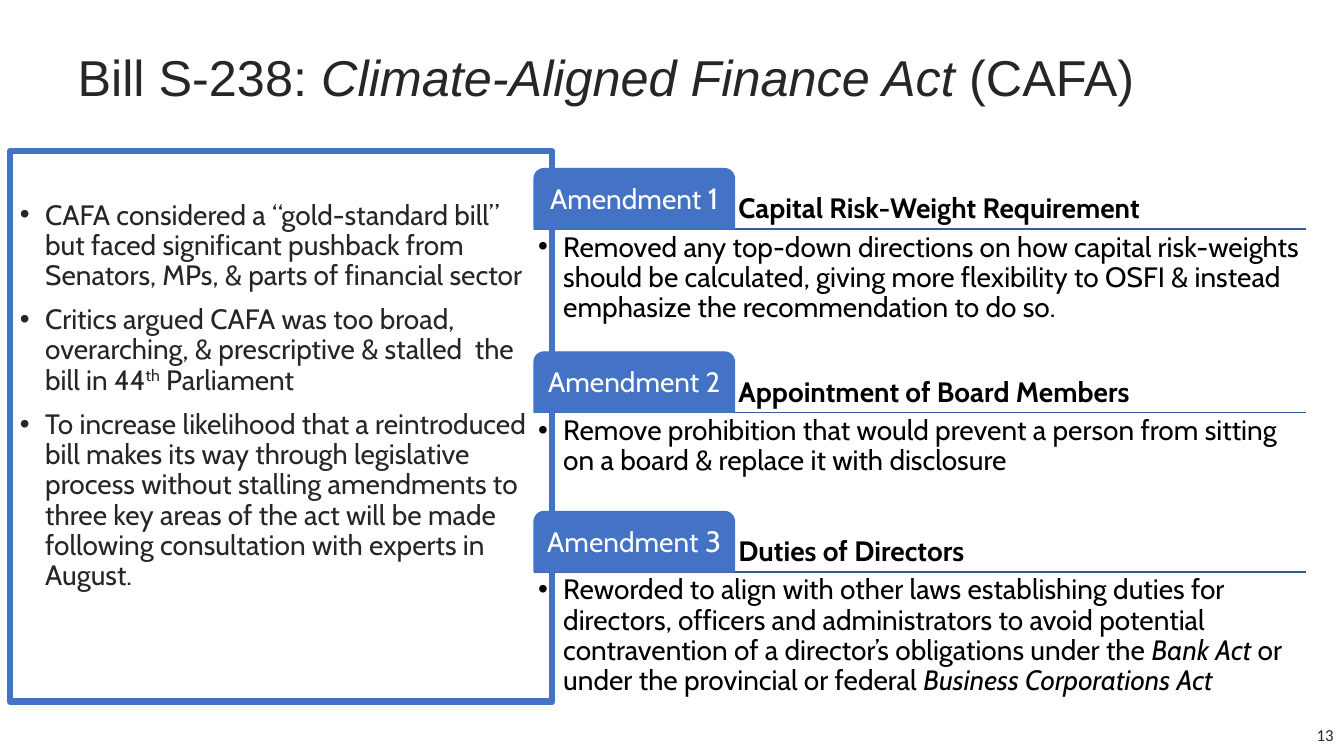
"""Build the slide on the amendments to Bill S-238."""
from lxml.etree import SubElement
from pptx import Presentation
from pptx.dml.color import RGBColor
from pptx.enum.shapes import MSO_CONNECTOR as Connector, MSO_SHAPE as Shape
from pptx.enum.text import MSO_ANCHOR as Anchor, MSO_AUTO_SIZE as AutoSize, PP_ALIGN as Align
from pptx.oxml.ns import qn
from pptx.util import Cm, Pt

BLUE = RGBColor(0x44, 0x72, 0xC4)
DARK_BLUE = RGBColor(0x36, 0x5B, 0x9D)
CHARCOAL = RGBColor(0x26, 0x26, 0x26)
BLACK = RGBColor(0, 0, 0)
WHITE = RGBColor(0xFF, 0xFF, 0xFF)

LEFT, WIDTH = 13.46, 19.44
TAB_WIDTH, TAB_HEIGHT = 5.05, 1.52
FIRST_TOP, GAP = 4.25, 0.06
INSET = 0.1

ITALIC = {"italic": True}
BACKGROUND = [
    [("CAFA considered a “gold-standard bill” but faced significant pushback from "
      "Senators, MPs, & parts of financial sector", {})],
    [("Critics argued CAFA was too broad, overarching, & prescriptive & stalled  the "
      "bill in 44", {}), ("th", {"raised": True}), (" Parliament", {})],
    [("To increase likelihood that a reintroduced bill makes its way through legislative "
      "process without stalling amendments to three key areas of the act will be made "
      "following consultation with experts in August.", {})],
]
AMENDMENTS = [
    (" 1", 21, "Capital Risk-Weight Requirement", 3.04, [
        ("Removed any top-down directions on how capital risk-weights should be calculated, "
         "giving more flexibility to OSFI & instead emphasize the recommendation to do so.", {})]),
    (" 2", 20, "Appointment of Board Members", 2.44, [
        ("Remove prohibition that would prevent a person from sitting on a board & replace "
         "it with disclosure", {})]),
    (" 3", 21, "Duties of Directors", 4.64, [
        ("Reworded to align with other laws establishing duties for directors, officers and "
         "administrators to avoid potential contravention of a director’s obligations under "
         "the ", {}),
        ("Bank Act ", ITALIC),
        ("or under the provincial or federal ", {}),
        ("Business Corporations Act", ITALIC)]),
]


def add_text(para, text, size=20, color=BLACK, font="Cabin", bold=False, italic=False,
             raised=False):
    """Add one formatted span to a paragraph."""
    span = para.add_run()
    span.text = text
    span.font.name, span.font.size = font, Pt(size)
    span.font.bold, span.font.italic = bold, italic
    span.font.color.rgb = color
    if raised:
        span.font._element.set("baseline", "30000")


def place(shape, left, top, width, height):
    """Move and size a shape, in centimetres."""
    shape.left, shape.top = Cm(left), Cm(top)
    shape.width, shape.height = Cm(width), Cm(height)


def set_frame(shape, anchor=Anchor.TOP, inset=None):
    """Set wrapping, anchor and margins, and return the text frame."""
    frame = shape.text_frame
    frame.word_wrap, frame.auto_size = True, AutoSize.NONE
    frame.vertical_anchor = anchor
    if inset is not None:
        frame.margin_left = frame.margin_right = Cm(inset)
        frame.margin_top = frame.margin_bottom = Cm(inset)
    return frame


def format_para(para, align=Align.LEFT, before=0, bullet=False):
    """Set alignment, spacing and an optional bullet."""
    para.alignment = align
    para.line_spacing = 0.9
    para.space_before, para.space_after = Pt(before), Pt(0)
    if bullet:
        properties = para._p.get_or_add_pPr()
        properties.set("marL", str(Cm(0.635)))
        properties.set("indent", str(-Cm(0.635)))
        SubElement(properties, qn("a:buFont")).set("typeface", "Arial")
        SubElement(properties, qn("a:buChar")).set("char", "•")


def add_box(slide, left, top, width, height, anchor=Anchor.TOP, inset=None):
    """Add a text box and return its text frame."""
    box = slide.shapes.add_textbox(Cm(left), Cm(top), Cm(width), Cm(height))
    return set_frame(box, anchor, inset)


def add_title(slide):
    """Fill the title placeholder."""
    title = slide.shapes.title
    place(title, 1.7, 0.69, 32.46, 2.64)
    para = set_frame(title, Anchor.MIDDLE).paragraphs[0]
    format_para(para)
    for text, style in [("Bill S-238: ", {}), ("Climate-Aligned Finance Act ", ITALIC),
                        ("(CAFA)", {})]:
        add_text(para, text, size=36, color=CHARCOAL, font="Arial", **style)


def add_background(slide):
    """Fill the framed list placeholder on the left."""
    body = slide.placeholders[1]
    place(body, 0.25, 3.81, 13.67, 13.87)
    body.line.color.rgb, body.line.width = BLUE, Pt(4.5)
    frame = set_frame(body)
    frame.margin_top = Cm(1.25)
    for index, spans in enumerate(BACKGROUND):
        para = frame.add_paragraph() if index else frame.paragraphs[0]
        format_para(para, before=10 if index else 0, bullet=True)
        for text, style in spans:
            add_text(para, text, color=CHARCOAL, **style)


def add_rule(slide, top):
    """Add the thin line under an amendment's heading."""
    rule = slide.shapes.add_connector(Connector.STRAIGHT, Cm(LEFT), Cm(top),
                                      Cm(LEFT + WIDTH), Cm(top))
    rule.line.color.rgb, rule.line.width = DARK_BLUE, Pt(1)
    SubElement(rule._element.spPr, qn("a:effectLst"))


def add_tab(slide, top, number, number_size):
    """Add the blue tab that names an amendment."""
    tab = slide.shapes.add_shape(Shape.ROUND_2_SAME_RECTANGLE, Cm(LEFT), Cm(top),
                                 Cm(TAB_WIDTH), Cm(TAB_HEIGHT))
    tab.shadow.inherit = False
    tab.fill.solid()
    tab.fill.fore_color.rgb = tab.line.color.rgb = BLUE
    tab.line.width = Pt(1)
    para = set_frame(tab, Anchor.MIDDLE, INSET).paragraphs[0]
    format_para(para, Align.CENTER)
    add_text(para, "Amendment", color=WHITE)
    add_text(para, number, size=number_size, color=WHITE)


def add_amendment(slide, top, number, number_size, heading, height, spans):
    """Add one amendment: rule, heading, tab and description."""
    bottom = top + TAB_HEIGHT
    add_rule(slide, bottom)
    para = add_box(slide, LEFT + TAB_WIDTH, top, WIDTH - TAB_WIDTH, TAB_HEIGHT,
                   Anchor.BOTTOM, INSET).paragraphs[0]
    format_para(para)
    add_text(para, heading, bold=True)
    add_tab(slide, top, number, number_size)
    para = add_box(slide, LEFT, bottom, WIDTH, height, inset=INSET).paragraphs[0]
    format_para(para, bullet=True)
    for text, style in spans:
        add_text(para, text, **style)


def add_page_number(slide):
    """Add the page number at the lower right."""
    para = add_box(slide, 26.24, 18.01, 7.62, 1.02, Anchor.MIDDLE).paragraphs[0]
    para.alignment = Align.RIGHT
    add_text(para, "13", size=12, color=CHARCOAL, font="Calibri")


def main():
    """Build and save the deck."""
    deck = Presentation()
    deck.slide_width, deck.slide_height = Cm(33.87), Cm(19.05)
    slide = deck.slides.add_slide(deck.slide_layouts[1])
    add_background(slide)
    add_page_number(slide)
    add_title(slide)
    top = FIRST_TOP
    for number, number_size, heading, height, spans in AMENDMENTS:
        add_amendment(slide, top, number, number_size, heading, height, spans)
        top += TAB_HEIGHT + height + GAP
    deck.save("out.pptx")


if __name__ == "__main__":
    main()
